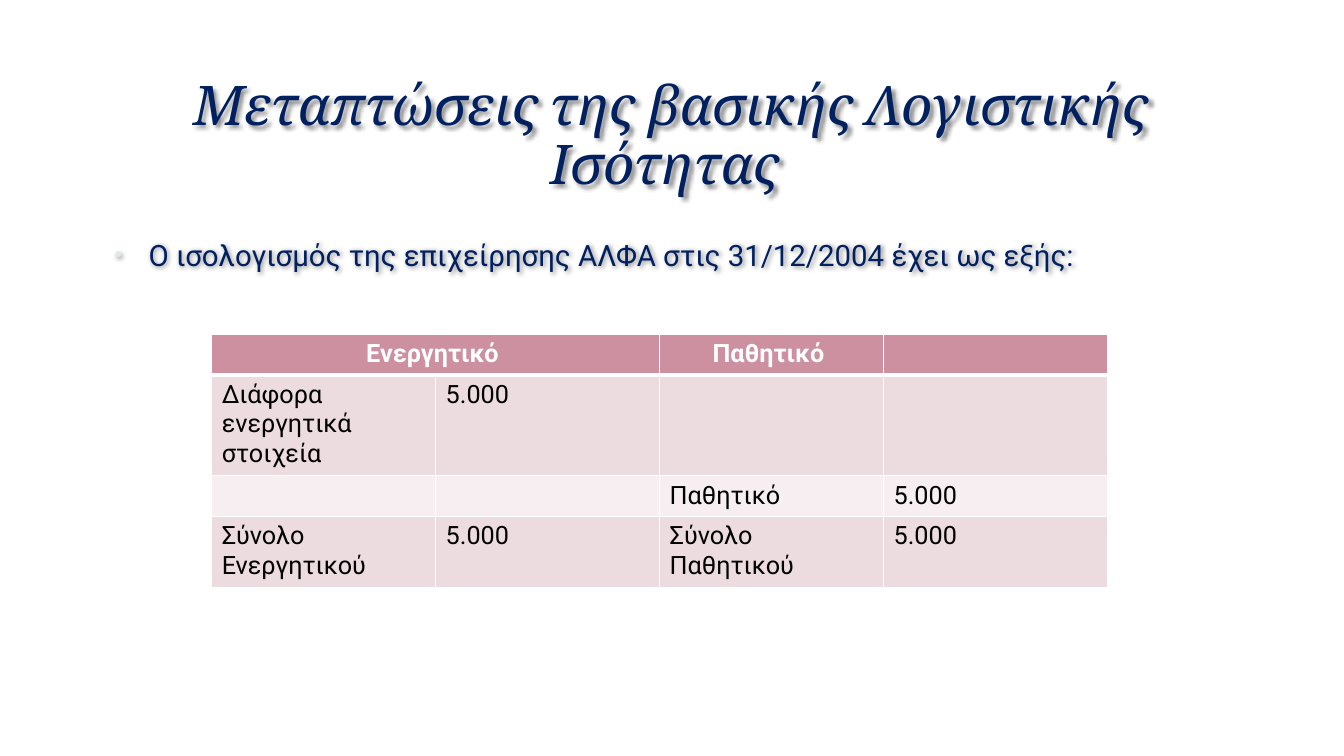
import pptx
import pptx.dml.color
import pptx.enum.text
import pptx.oxml
import pptx.oxml.ns
import pptx.util

Pt = pptx.util.Pt
CENTER = pptx.enum.text.PP_ALIGN.CENTER
MIDDLE = pptx.enum.text.MSO_ANCHOR.MIDDLE
TOP = pptx.enum.text.MSO_ANCHOR.TOP

TITLE = "Μεταπτώσεις της βασικής Λογιστικής Ισότητας "
INTRODUCTION = "Ο ισολογισμός της επιχείρησης ΑΛΦΑ στις 31/12/2004 έχει ως εξής:"
BALANCE_SHEET = [
    ["Ενεργητικό ", "", "Παθητικό ", ""],
    ["Διάφορα ενεργητικά στοιχεία", "5.000", "", ""],
    ["", "", "Παθητικό", "5.000"],
    ["Σύνολο Ενεργητικού", "5.000", "Σύνολο Παθητικού", "5.000"],
]
NAVY, WHITE, BLACK = "002060", "FFFFFF", "000000"
HEADER_FILL = "CC90A0"
BAND_FILLS = ["F6EEF0", "ECDBDF"]
COLUMN_WIDTH, ROW_HEIGHT = 160, 29.2
TABLE_LEFT, TABLE_TOP = 151.2, 238.6
MARGIN, TEXT_WIDTH = 72, 815


def color(value):
    return pptx.dml.color.RGBColor.from_string(value)


def xml(tag, attributes, content=""):
    namespace = pptx.oxml.ns.nsdecls("a")
    return pptx.oxml.parse_xml(f"<a:{tag} {namespace} {attributes}>{content}</a:{tag}>")


def style_runs(paragraph, font_name, size, font_color, bold=False, italic=False):
    for run in paragraph.runs:
        font = run.font
        font.name, font.size = font_name, Pt(size)
        font.bold, font.italic = bold, italic
        font.color.rgb = color(font_color)


def add_shadowed_text(slide, text, top, height, anchor):
    """Add a full-width text box with a soft shadow; return its paragraph."""
    shape = slide.shapes.add_textbox(Pt(MARGIN), Pt(top), Pt(TEXT_WIDTH), Pt(height))
    shape.text_frame.word_wrap = True
    shape.text_frame.vertical_anchor = anchor
    shape.text_frame.text = text
    shape._element.spPr.append(xml(
        "effectLst", "",
        '<a:outerShdw blurRad="38100" dist="25400" dir="2700000" algn="tl">'
        '<a:srgbClr val="000000"><a:alpha val="45000"/></a:srgbClr></a:outerShdw>'))
    return shape.text_frame.paragraphs[0]


def set_borders(cell, top, bottom):
    properties = cell._tc.get_or_add_tcPr()
    widths = {"lnL": 1, "lnR": 1, "lnT": top, "lnB": bottom}
    for position, (tag, width) in enumerate(widths.items()):
        properties.insert(position, xml(
            tag, f'w="{Pt(width)}"',
            f'<a:solidFill><a:srgbClr val="{WHITE}"/></a:solidFill>'))


def add_introduction(slide):
    paragraph = add_shadowed_text(slide, INTRODUCTION, 163.4, 292.3, TOP)
    paragraph.line_spacing = 1.1
    paragraph.space_before, paragraph.space_after = Pt(4.2), Pt(6)
    style_runs(paragraph, "Roboto", 21, NAVY)
    properties = paragraph._p.get_or_add_pPr()
    properties.set("marL", str(Pt(27)))
    properties.set("indent", str(Pt(-24)))
    properties.append(xml("buClr", "", '<a:srgbClr val="E2E8E6"/>'))
    properties.append(xml("buSzPct", 'val="70000"'))
    properties.append(xml("buFont", 'typeface="Arial"'))
    properties.append(xml("buChar", 'char="•"'))


def add_balance_sheet(slide):
    row_count, column_count = len(BALANCE_SHEET), len(BALANCE_SHEET[0])
    table = slide.shapes.add_table(
        row_count, column_count, Pt(TABLE_LEFT), Pt(TABLE_TOP),
        Pt(COLUMN_WIDTH * column_count), Pt(ROW_HEIGHT * row_count)).table
    for row_index, texts in enumerate(BALANCE_SHEET):
        table.rows[row_index].height = Pt(ROW_HEIGHT)
        header = row_index == 0
        for column_index, text in enumerate(texts):
            cell = table.cell(row_index, column_index)
            cell.text_frame.text = text
            cell.fill.solid()
            cell.fill.fore_color.rgb = color(
                HEADER_FILL if header else BAND_FILLS[row_index % 2])
            set_borders(cell, 3 if row_index == 1 else 1, 3 if header else 1)
            paragraph = cell.text_frame.paragraphs[0]
            if header:
                paragraph.alignment = CENTER
            style_runs(paragraph, "Roboto", 18, WHITE if header else BLACK, bold=header)
    table.cell(0, 0).merge(table.cell(0, 1))


def add_title(slide):
    paragraph = add_shadowed_text(slide, TITLE, 48.2, 99.4, MIDDLE)
    paragraph.alignment = CENTER
    paragraph.line_spacing = 0.9
    style_runs(paragraph, "Cambria", 39, NAVY, italic=True)


def main():
    presentation = pptx.Presentation()
    presentation.slide_width, presentation.slide_height = Pt(960), Pt(540)
    slide = presentation.slides.add_slide(presentation.slide_layouts[6])
    add_introduction(slide)
    add_balance_sheet(slide)
    add_title(slide)
    presentation.save("out.pptx")


if __name__ == "__main__":
    main()
